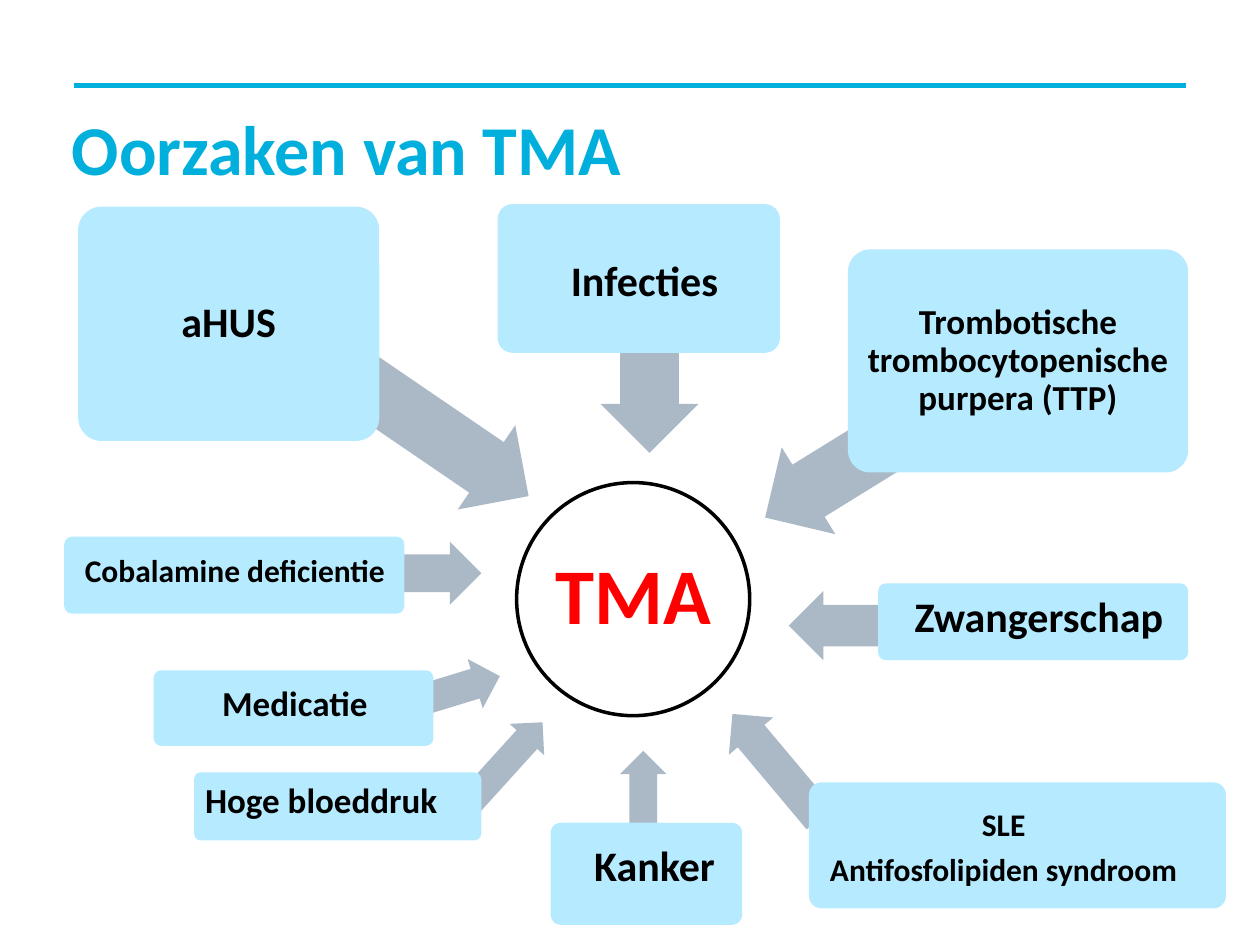
from lxml.etree import SubElement
from pptx import Presentation
from pptx.dml.color import RGBColor
from pptx.enum.shapes import MSO_CONNECTOR, MSO_SHAPE
from pptx.enum.text import MSO_ANCHOR, PP_ALIGN
from pptx.oxml.ns import qn
from pptx.util import Inches, Pt

THEME = {
    "font": "Calibri",
    "blue": "00AFDC", "pale": "B6EBFF", "grey": "ABB9C7",
    "black": "000000", "red": "FF0000",
    "title": 40, "hub": 45, "large": 24, "mid": 20, "small": 18,
}
COLS, ROWS = 100, 75

TITLE = ("Oorzaken van TMA", (5.7, 9.2, 88.6, 5.8))
RULE = (5.9, 94.1, 6.8)
HUB = ("TMA", (41, 38.3, 18.5, 18.5))

ARROWS = [
    ((20.5, 28.7, 23.5, 8.1), 214.3),
    ((59.1, 31.3, 21.8, 8.1), 328.3),
    ((62.6, 46.9, 8.4, 5.5), 0),
    ((33.7, 52.5, 6.1, 4.1), 163),
    ((31.1, 43, 7.1, 5), 180),
    ((56.2, 58.5, 10.8, 4.6), 50),
    ((47.9, 60.9, 6.3, 3.7), 90),
    ((34.2, 59.4, 10.6, 3.7), 132.2),
    ((47.2, 27.7, 8.7, 7.8), 270),
]

CAUSES = [
    (["aHUS"], "large", (6.2, 16.4, 23.9, 18.6), None),
    (["Trombotische trombocytopenische purpera (TTP)"], "mid",
     (67.3, 19.8, 27, 17.7), None),
    (["Cobalamine deficientie"], "small",
     (5.1, 42.6, 27, 6.1), (5.8, 42.5, 25.7, 5.8)),
    (["SLE", "Antifosfolipiden syndroom"], "small",
     (64.2, 62.1, 33.1, 10), (64.7, 62.7, 29.9, 9.4)),
    (["Kanker"], "large", (43.7, 65.3, 15.2, 8.1), (41.3, 65.1, 21.3, 7.6)),
    (["Hoge bloeddruk"], "mid",
     (15.4, 61.3, 22.8, 5.4), (12.8, 61.1, 25.4, 5.1)),
    (["Medicatie"], "mid", (12.2, 53.2, 22.2, 6), (12.8, 53.8, 21.2, 4.4)),
    (["Zwangerschap"], "large",
     (69.7, 46.3, 24.6, 6.1), (70.7, 46.2, 23.5, 5.8)),
    (["Infecties"], "large", (39.5, 16.2, 22.4, 11.8), (41.3, 16.9, 19.7, 11.1)),
]

deck = Presentation()
deck.slide_width, deck.slide_height = Inches(10), Inches(7.5)
slide = deck.slides.add_slide(deck.slide_layouts[6])
cell_w, cell_h = deck.slide_width / COLS, deck.slide_height / ROWS


def place(area):
    left, top, width, height = area
    return [round(n) for n in
            (left * cell_w, top * cell_h, width * cell_w, height * cell_h)]


def tint(name):
    return RGBColor.from_string(THEME[name])


def add_form(kind, area, fill=None):
    form = slide.shapes.add_shape(kind, *place(area))
    form.shadow.inherit = False
    form.line.fill.background()
    if fill:
        form.fill.solid()
        form.fill.fore_color.rgb = tint(fill)
    else:
        form.fill.background()
    return form


def add_box(area):
    return slide.shapes.add_textbox(*place(area))


def write(form, lines, size, color="black", align=PP_ALIGN.CENTER,
          inset=0.03, pitch=0.9, after=0.35):
    frame = form.text_frame
    frame.word_wrap = True
    frame.vertical_anchor = MSO_ANCHOR.MIDDLE
    frame.margin_left = frame.margin_right = Inches(inset)
    frame.margin_top = frame.margin_bottom = Inches(inset)
    for row, line in enumerate(lines):
        para = frame.add_paragraph() if row else frame.paragraphs[0]
        para.text = line
        para.alignment = align
        para.line_spacing = pitch
        para.space_after = Pt(after * THEME[size])
        font = para.font
        font.name, font.size, font.bold = THEME["font"], Pt(THEME[size]), True
        font.color.rgb = tint(color)


word, area = HUB
hub = add_form(MSO_SHAPE.OVAL, area)
hub.line.color.rgb = tint("black")
hub.line.width = Pt(2)
write(add_box(area), [word], "hub", "red")

for area, turn in ARROWS:
    arrow = add_form(MSO_SHAPE.LEFT_ARROW, area, "grey")
    arrow.adjustments[0], arrow.adjustments[1] = 0.6, 0.5
    arrow.rotation = turn

for lines, size, area, spot in CAUSES:
    card = add_form(MSO_SHAPE.ROUNDED_RECTANGLE, area, "pale")
    card.adjustments[0] = 0.1
    write(add_box(spot or area), lines, size, inset=0.03 if spot else 0.04)

word, area = TITLE
write(add_box(area), [word], "title", "blue", PP_ALIGN.LEFT, 0, Pt(42), 0)

start, end, level = RULE
x, y, width, _ = place((start, level, end - start, 0))
rule = slide.shapes.add_connector(MSO_CONNECTOR.STRAIGHT, x, y, x + width, y)
rule.line.color.rgb = tint("blue")
rule.line.width = Pt(3)
SubElement(rule._element.spPr, qn("a:effectLst"))

deck.save("out.pptx")
